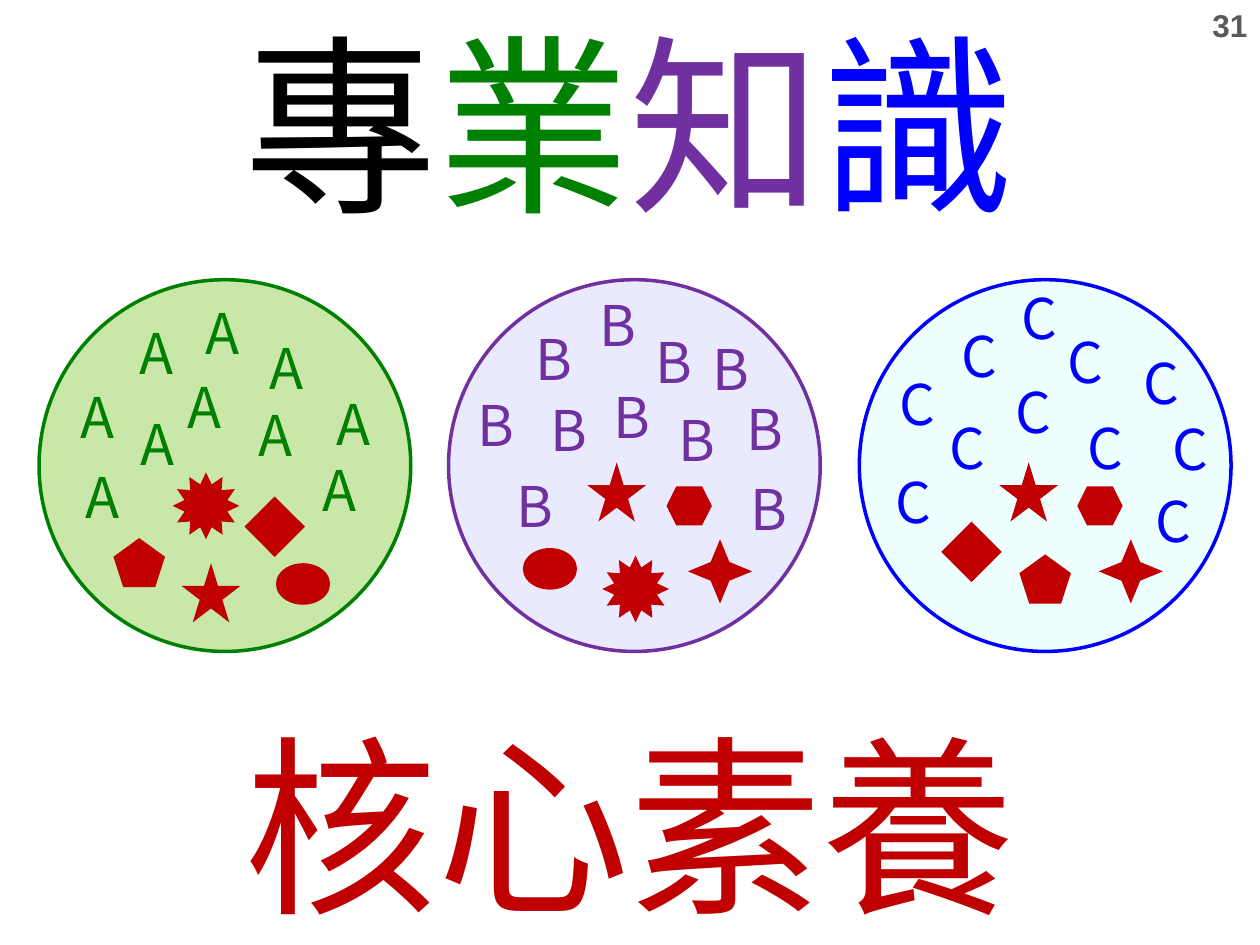
from lxml.etree import SubElement
from pptx import Presentation
from pptx.dml.color import RGBColor
from pptx.enum.lang import MSO_LANGUAGE_ID
from pptx.enum.shapes import MSO_SHAPE
from pptx.enum.text import MSO_AUTO_SIZE, PP_ALIGN
from pptx.oxml.ns import qn
from pptx.util import Inches, Pt

BLACK, GREEN, PURPLE, BLUE, RED, GRAY = "000000", "008000", "7030A0", "0000FF", "C00000", "595959"
LETTER_FONT, TITLE_FONT = "Noto Sans CJK JP", "Noto Sans CJK SC"
CIRCLE_TOP, CIRCLE_SIZE, CIRCLE_OPACITY = 2.22, 2.95, 49000

TITLES = [
    (0, [("專", BLACK), ("業", GREEN), ("知", PURPLE), ("識", BLUE)]),
    (5.56, [("核心素養", RED)]),
]

SYMBOLS = {
    "pentagon": (MSO_SHAPE.REGULAR_PENTAGON, 0.41, 0.39, None),
    "burst": (MSO_SHAPE.STAR_12_POINT, 0.53, 0.53, 0.332),
    "star": (MSO_SHAPE.STAR_5_POINT, 0.47, 0.47, None),
    "oval": (MSO_SHAPE.OVAL, 0.43, 0.33, None),
    "diamond": (MSO_SHAPE.DIAMOND, 0.48, 0.48, None),
    "hexagon": (MSO_SHAPE.HEXAGON, 0.36, 0.31, None),
    "sparkle": (MSO_SHAPE.STAR_4_POINT, 0.51, 0.51, 0.206),
}

FIELDS = [
    {
        "letter": "A", "left": 0.31, "fill": "92D050", "color": GREEN,
        "letters": [(1.01, 2.48), (1.53, 2.32), (2.04, 2.6), (1.39, 2.91), (1.95, 3.13),
                    (2.57, 3.04), (2.46, 3.57), (0.54, 2.99), (1.02, 3.2), (0.58, 3.62)],
        "symbols": [("pentagon", 0.9, 4.27), ("burst", 1.37, 3.75), ("star", 1.44, 4.47),
                    ("oval", 2.19, 4.47), ("diamond", 1.94, 3.94)],
    },
    {
        "letter": "B", "left": 3.56, "fill": "D5D5FF", "color": PURPLE,
        "letters": [(4.15, 2.53), (4.66, 2.26), (5.1, 2.55), (4.77, 2.99), (5.29, 3.17), (5.83, 3.08),
                    (5.86, 3.72), (3.69, 3.05), (4.27, 3.09), (4, 3.69), (5.56, 2.61)],
        "symbols": [("star", 4.66, 3.67), ("hexagon", 5.29, 3.86), ("oval", 4.15, 4.35),
                    ("sparkle", 5.46, 4.28), ("burst", 4.78, 4.41)],
    },
    {
        "letter": "C", "left": 6.82, "fill": "DDFFFF", "color": BLUE,
        "letters": [(7.53, 2.5), (8.01, 2.2), (8.37, 2.55), (7.96, 2.95), (8.53, 3.23), (9.21, 3.24),
                    (9.07, 3.81), (7.04, 2.88), (7.44, 3.23), (7.01, 3.66), (8.98, 2.72)],
        "symbols": [("pentagon", 8.09, 4.4), ("star", 7.93, 3.67), ("hexagon", 8.55, 3.86),
                    ("sparkle", 8.72, 4.28), ("diamond", 7.47, 4.14)],
    },
]


def rgb(color):
    return RGBColor.from_string(color)


def add_text(shapes, bounds, spans, size, font, wrap=False, align=PP_ALIGN.LEFT, bold=False):
    box = shapes.add_textbox(*map(Inches, bounds))
    frame = box.text_frame
    frame.word_wrap = wrap
    frame.auto_size = MSO_AUTO_SIZE.SHAPE_TO_FIT_TEXT
    para = frame.paragraphs[0]
    para.alignment = align
    para.font.size, para.font.name, para.font.bold = Pt(size), font, bold
    for text, color in spans:
        span = para.add_run()
        span.text = text
        span.font.size, span.font.name, span.font.bold = Pt(size), font, bold
        span.font.language_id = MSO_LANGUAGE_ID.TRADITIONAL_CHINESE
        span.font.color.rgb = rgb(color)
        SubElement(span.font._element, qn("a:ea"), typeface=font)


def add_filled(shapes, kind, bounds, color):
    shape = shapes.add_shape(kind, *map(Inches, bounds))
    shape.shadow.inherit = False
    shape.fill.solid()
    shape.fill.fore_color.rgb = rgb(color)
    shape.line.fill.background()
    return shape


def add_field(page, field):
    shapes = page.shapes.add_group_shape().shapes
    circle = add_filled(shapes, MSO_SHAPE.OVAL,
                        (field["left"], CIRCLE_TOP, CIRCLE_SIZE, CIRCLE_SIZE), field["fill"])
    circle.line.color.rgb = rgb(field["color"])
    circle.line.width = Pt(2)
    fill_color = circle._element.spPr.find(qn("a:solidFill"))[0]
    SubElement(fill_color, qn("a:alpha"), val=str(CIRCLE_OPACITY))
    for left, top in field["letters"]:
        add_text(shapes, (left, top, 0.51, 0.64), [(field["letter"], field["color"])], 32, LETTER_FONT)
    for name, left, top in field["symbols"]:
        kind, width, height, adjustment = SYMBOLS[name]
        symbol = add_filled(shapes, kind, (left, top, width, height), RED)
        if adjustment is not None:
            symbol.adjustments[0] = adjustment


def main():
    deck = Presentation()
    deck.slide_width, deck.slide_height = Inches(10), Inches(7.5)
    page = deck.slides.add_slide(deck.slide_layouts[6])
    add_text(page.shapes, (9.52, 0, 0.48, 0.4), [("31", GRAY)], 18, "Arial",
             align=PP_ALIGN.CENTER, bold=True)
    for field in FIELDS:
        add_field(page, field)
    for top, spans in TITLES:
        add_text(page.shapes, (0, top, 10, 1.95), spans, 110, TITLE_FONT,
                 wrap=True, align=PP_ALIGN.CENTER)
    deck.save("out.pptx")


if __name__ == "__main__":
    main()
